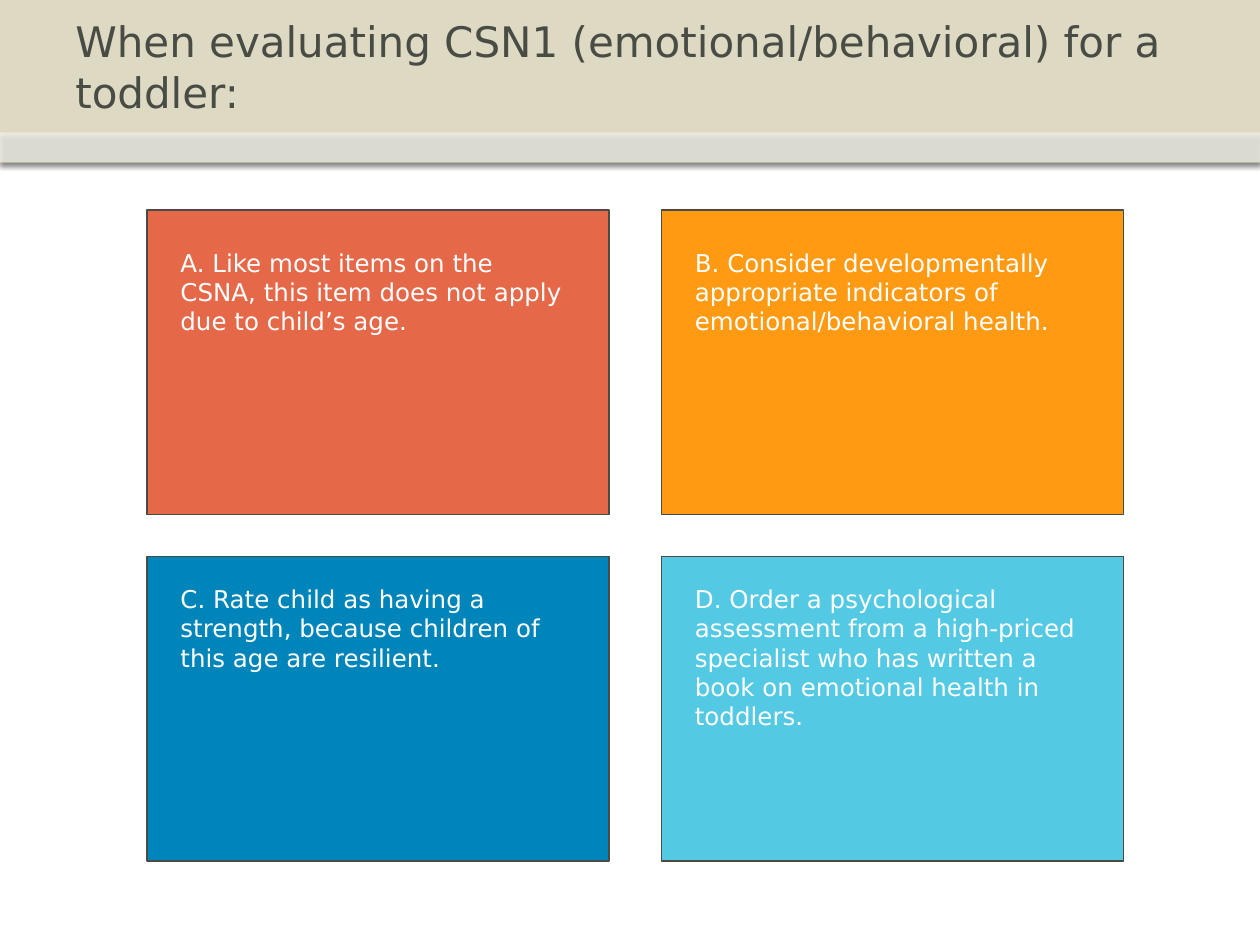
from lxml.etree import SubElement
from pptx import Presentation
from pptx.dml.color import RGBColor
from pptx.enum.shapes import MSO_SHAPE as Shape
from pptx.enum.text import MSO_ANCHOR as Anchor, MSO_AUTO_SIZE as AutoSize, PP_ALIGN as Align
from pptx.oxml.ns import qn
from pptx.util import Pt

FONT = "DejaVu Sans"
COLORS = {
    "sand": "DDD9C3", "white": "FFFFFF", "ink": "484C45", "shadow": "000000",
    "coral": "E56849", "orange": "FF9A12", "blue": "0085BA", "sky": "53C9E4",
}
TITLE = "When evaluating CSN1 (emotional/behavioral) for a toddler:"
ANSWERS = [
    ("coral", "A. Like most items on the CSNA, this item does not apply due to child’s age."),
    ("orange", "B. Consider developmentally appropriate indicators of emotional/behavioral health."),
    ("blue", "C. Rate child as having a strength, because children of this age are resilient."),
    ("sky", "D. Order a psychological assessment from a high-priced specialist "
            "who has written a book on emotional health in toddlers."),
]


def add_box(slide, left, top, width, height, color):
    """Add a filled rectangle without outline or shadow."""
    shape = slide.shapes.add_shape(Shape.RECTANGLE, Pt(left), Pt(top), Pt(width), Pt(height))
    shape.shadow.inherit = False
    shape.fill.solid()
    shape.fill.fore_color.rgb = RGBColor.from_string(COLORS[color])
    shape.line.fill.background()
    return shape


def add_text(slide, left, top, width, height, text, size, color, anchor=Anchor.TOP):
    """Add a wrapped, left-aligned text box and return its frame."""
    frame = slide.shapes.add_textbox(Pt(left), Pt(top), Pt(width), Pt(height)).text_frame
    frame.word_wrap = True
    frame.vertical_anchor = anchor
    paragraph = frame.paragraphs[0]
    paragraph.alignment = Align.LEFT
    run = paragraph.add_run()
    run.text = text
    run.font.name = FONT
    run.font.size = Pt(size)
    run.font.color.rgb = RGBColor.from_string(COLORS[color])
    return frame


def set_alpha(color_element, percent):
    """Set the opacity of a colour element."""
    SubElement(color_element, qn("a:alpha"), val=str(percent * 1000))


def add_shadow(shape):
    """Cast a soft shadow straight down."""
    effects = shape.element.spPr.find(qn("a:effectLst"))
    shadow = SubElement(effects, qn("a:outerShdw"), blurRad=str(Pt(3.1)), dist=str(Pt(1.8)),
                        dir="5400000", rotWithShape="0")
    set_alpha(SubElement(shadow, qn("a:srgbClr"), val=COLORS["shadow"]), 35)


def add_header(slide, left, top, width, height):
    """Draw the title band with its translucent lower strip."""
    strip_height = 17.3
    title_height = height - strip_height
    band = add_box(slide, left, top, width, height, "sand")
    strip = add_box(slide, left, top + title_height, width, strip_height, "white")
    set_alpha(strip.element.spPr.find(qn("a:solidFill"))[0], 53)
    for shape in (band, strip):
        add_shadow(shape)
    add_text(slide, left + 36, top, width - 72, title_height, TITLE, 24, "ink", Anchor.MIDDLE)


def add_answers(slide, left, top, width, height):
    """Lay out the answer cards in a two-by-two grid."""
    card_width, card_height = 264, 174
    for index, (color, text) in enumerate(ANSWERS):
        row, column = divmod(index, 2)
        x = left + column * (width - card_width)
        y = top + row * (height - card_height)
        card = add_box(slide, x, y, card_width, card_height, color)
        card.line.color.rgb = RGBColor.from_string(COLORS["ink"])
        card.line.width = Pt(0.75)
        text_height = 92 if len(text) > 100 else 58
        frame = add_text(slide, x + 12, y + 18 - 6 * row, 234 + 6 * column, text_height,
                         text, 14, "white")
        frame.auto_size = AutoSize.SHAPE_TO_FIT_TEXT


def main():
    """Build and save the slide."""
    presentation = Presentation()
    presentation.slide_width, presentation.slide_height = Pt(720), Pt(540)
    slide = presentation.slides.add_slide(presentation.slide_layouts[6])
    add_header(slide, 0, 0, 720, 92.9)
    add_answers(slide, 84, 120, 558, 372)
    presentation.save("out.pptx")


if __name__ == "__main__":
    main()
